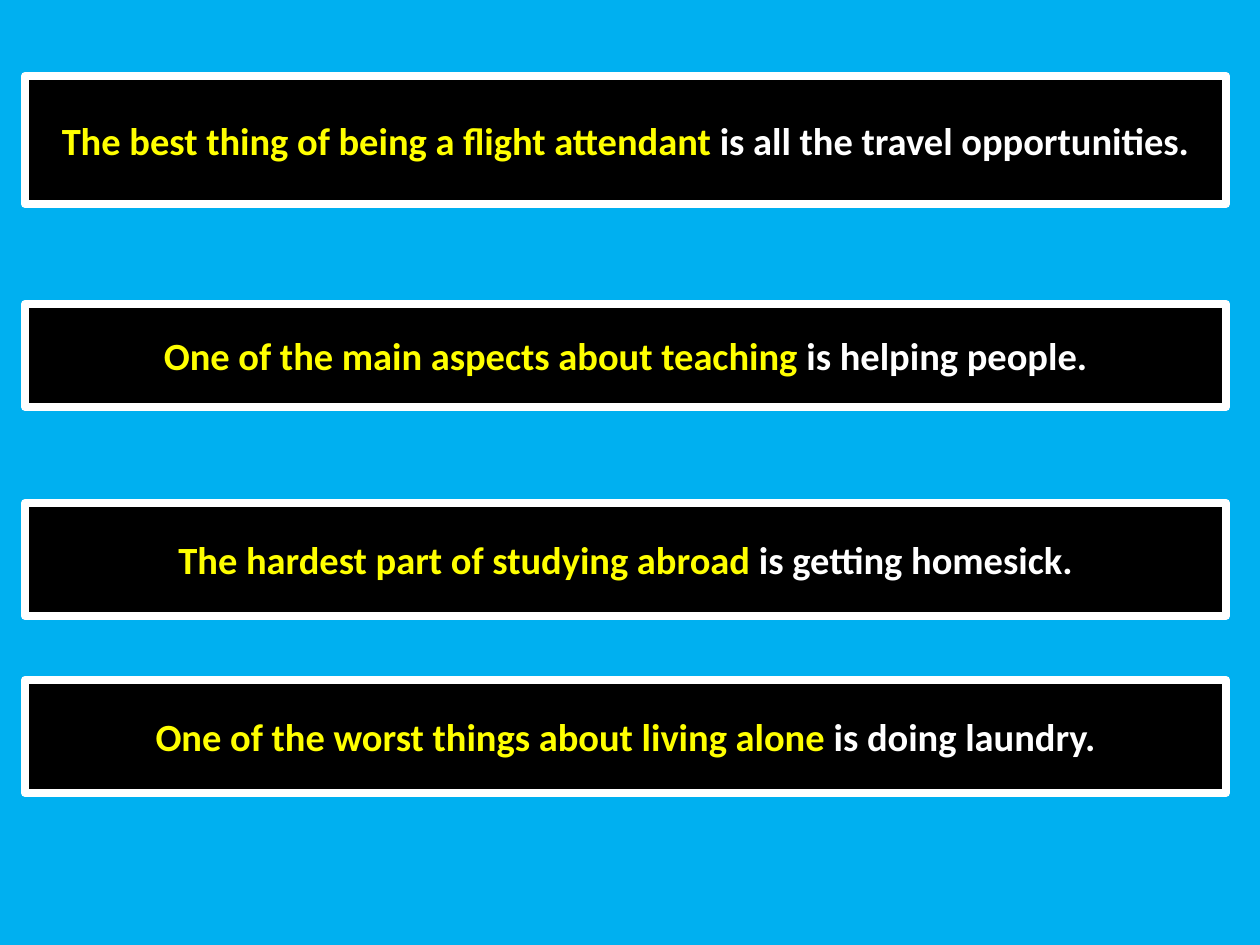
from pptx import Presentation
from pptx.dml.color import RGBColor
from pptx.enum.shapes import MSO_SHAPE
from pptx.enum.text import MSO_ANCHOR, PP_ALIGN
from pptx.util import Emu, Pt

RECTANGLE = MSO_SHAPE.RECTANGLE
MIDDLE = MSO_ANCHOR.MIDDLE
CENTER = PP_ALIGN.CENTER

PX_PER_INCH = 126
BLANK_LAYOUT = 6
SKY, BLACK, WHITE, YELLOW = "00B0F0", "000000", "FFFFFF", "FFFF00"

BANNER_LEFT, BANNER_WIDTH = 25, 1201
# Top, height, opening words, ending
BANNERS = [
    (76, 128, "The best thing of being a flight attendant ", "is all the travel opportunities."),
    (304, 103, "One of the main aspects about teaching ", "is helping people."),
    (503, 113, "The hardest part of studying abroad ", "is getting homesick."),
    (680, 113, "One of the worst things about living alone ", "is doing laundry."),
]


def px(length):
    return Emu(round(length * 914400 / PX_PER_INCH))


def color(hex_string):
    return RGBColor.from_string(hex_string)


def add_text(paragraph, text, fill=WHITE, size=22, font="Calibri", bold=True):
    run = paragraph.add_run()
    run.text = text
    run.font.name = font
    run.font.size = Pt(size)
    run.font.bold = bold
    run.font.color.rgb = color(fill)


def add_banner(slide, box, opening, ending):
    shape = slide.shapes.add_shape(RECTANGLE, *map(px, box))
    shape.shadow.inherit = False
    shape.fill.solid()
    shape.fill.fore_color.rgb = color(BLACK)
    shape.line.color.rgb = color(WHITE)
    shape.line.width = Pt(4.5)

    # Sentence: highlighted opening, plain ending
    frame = shape.text_frame
    frame.word_wrap = True
    frame.vertical_anchor = MIDDLE
    paragraph = frame.paragraphs[0]
    paragraph.alignment = CENTER
    add_text(paragraph, opening, fill=YELLOW)
    add_text(paragraph, ending)


def main():
    presentation = Presentation()
    presentation.slide_width = px(1260)
    presentation.slide_height = px(945)
    slide = presentation.slides.add_slide(presentation.slide_layouts[BLANK_LAYOUT])

    # Background
    background = slide.background.fill
    background.solid()
    background.fore_color.rgb = color(SKY)

    # Sentence banners
    for top, height, opening, ending in BANNERS:
        add_banner(slide, (BANNER_LEFT, top, BANNER_WIDTH, height), opening, ending)

    presentation.save("out.pptx")


if __name__ == "__main__":
    main()
